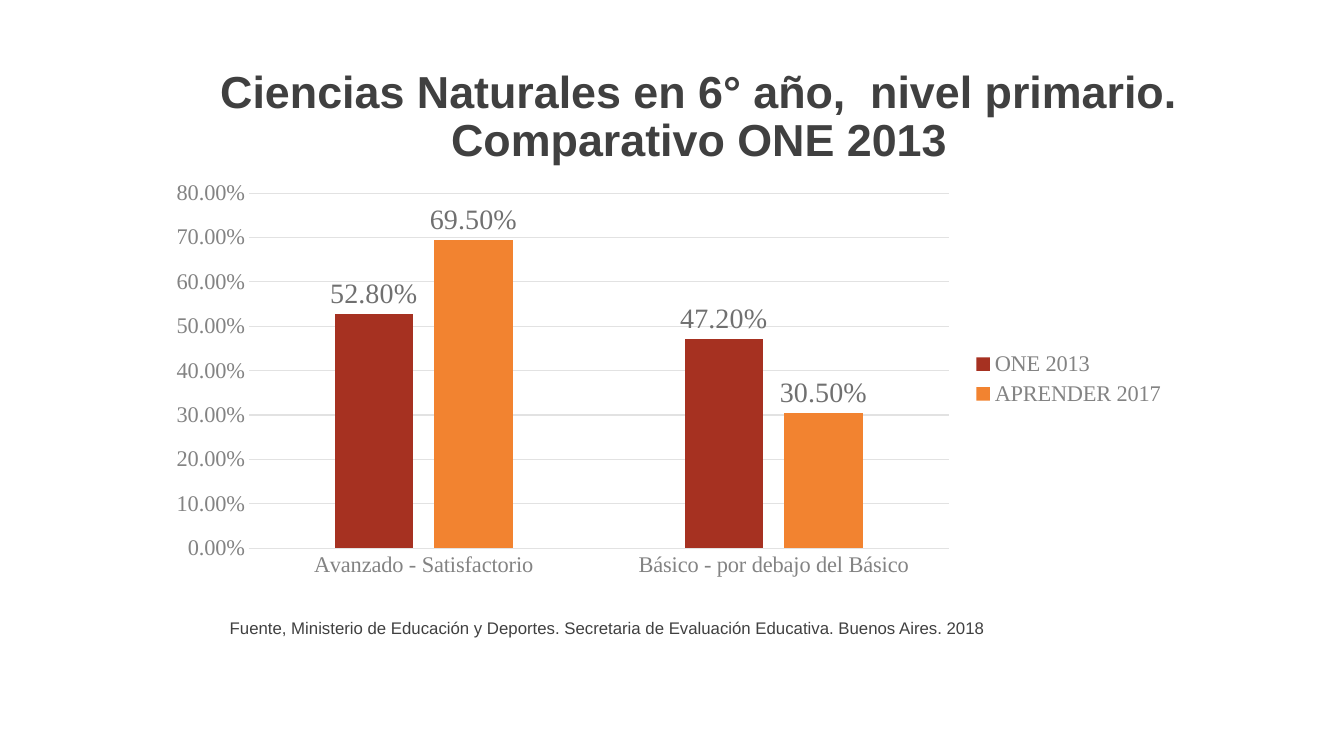
"""Build a slide comparing Natural Sciences results in ONE 2013 and APRENDER 2017."""
from lxml import etree
from pptx import Presentation
from pptx.chart.data import CategoryChartData
from pptx.dml.color import RGBColor
from pptx.enum.chart import XL_CHART_TYPE, XL_LABEL_POSITION, XL_LEGEND_POSITION, XL_TICK_MARK
from pptx.enum.text import MSO_ANCHOR, PP_ALIGN
from pptx.util import Inches, Pt

COLUMNS = XL_CHART_TYPE.COLUMN_CLUSTERED
OUTSIDE = XL_LABEL_POSITION.OUTSIDE_END
RIGHT = XL_LEGEND_POSITION.RIGHT
NO_TICK = XL_TICK_MARK.NONE
TOP, BOTTOM = MSO_ANCHOR.TOP, MSO_ANCHOR.BOTTOM
LEFT, CENTER = PP_ALIGN.LEFT, PP_ALIGN.CENTER

WHITE = RGBColor(0xFF, 0xFF, 0xFF)
DARK = RGBColor(0x40, 0x40, 0x40)
AXIS_GRAY = RGBColor(0x83, 0x83, 0x83)
LABEL_GRAY = RGBColor(0x70, 0x70, 0x70)
GRID_GRAY = RGBColor(0xE2, 0xE2, 0xE2)
RED = RGBColor(0xA6, 0x31, 0x21)
ORANGE = RGBColor(0xF2, 0x83, 0x30)

SANS, SERIF = "Arial", "Times New Roman"
PERCENT = "0.00%"

TEXTS = [
    dict(text="Ciencias Naturales en 6° año,  nivel primario.\nComparativo ONE 2013",
         box=(1.76, 0.52, 10.35, 1.18), anchor=BOTTOM,
         para=dict(alignment=CENTER, line_spacing=0.9),
         font=dict(name=SANS, size=Pt(32), bold=True)),
    dict(text="Fuente, Ministerio de Educación y Deportes. Secretaria de Evaluación "
              "Educativa. Buenos Aires. 2018",
         box=(2.18, 6.08, 8.99, 0.3), anchor=TOP,
         para=dict(alignment=LEFT),
         font=dict(name=SANS, size=Pt(12))),
]
CHART_BOX = (1.55, 1.71, 10.12, 4.1)
CATEGORIES = ["Avanzado - Satisfactorio", "Básico - por debajo del Básico"]
SERIES = [
    ("ONE 2013", (0.528, 0.472), RED),
    ("APRENDER 2017", (0.695, 0.305), ORANGE),
]
AXIS_FONT = dict(name=SERIF, size=Pt(16))
LABEL_FONT = dict(name=SERIF, size=Pt(20))


def set_attrs(obj, values):
    for name, value in values.items():
        setattr(obj, name, value)


def set_font(font, values, color):
    set_attrs(font, values)
    font.color.rgb = color


def set_line(line):
    line.color.rgb = GRID_GRAY
    line.width = Pt(0.75)


def add_text(s, text, box, anchor, para, font):
    tf = s.shapes.add_textbox(*map(Inches, box)).text_frame
    set_attrs(tf, dict(word_wrap=True, vertical_anchor=anchor))
    p = tf.paragraphs[0]
    p.text = text
    set_attrs(p, para)
    for r in p.runs:
        set_font(r.font, font, DARK)
    for br in p._p.findall("{*}br"):
        size = str(int(font["size"].pt * 100))
        etree.SubElement(br, p.runs[0].font._element.tag, sz=size)


def add_results_chart(s):
    data = CategoryChartData(number_format=PERCENT)
    data.categories = CATEGORIES
    for name, values, _ in SERIES:
        data.add_series(name, values)
    chart = s.shapes.add_chart(COLUMNS, *map(Inches, CHART_BOX), data).chart
    set_attrs(chart, dict(has_title=False, has_legend=True))
    set_font(chart.font, dict(name=SANS, size=Pt(10)), DARK)
    set_attrs(chart.legend, dict(position=RIGHT, include_in_layout=False))
    set_font(chart.legend.font, AXIS_FONT, AXIS_GRAY)

    for axis in (chart.category_axis, chart.value_axis):
        set_attrs(axis, dict(major_tick_mark=NO_TICK, minor_tick_mark=NO_TICK))
        set_font(axis.tick_labels.font, AXIS_FONT, AXIS_GRAY)
    set_line(chart.category_axis.format.line)
    axis = chart.value_axis
    set_attrs(axis, dict(minimum_scale=0, maximum_scale=0.8, major_unit=0.1))
    axis.format.line.fill.background()
    set_line(axis.major_gridlines.format.line)
    set_attrs(axis.tick_labels, dict(number_format=PERCENT, number_format_is_linked=False))

    plot = chart.plots[0]
    set_attrs(plot, dict(gap_width=219, overlap=-27, vary_by_categories=False))
    for series, (_, _, color) in zip(plot.series, SERIES):
        series.format.fill.solid()
        series.format.fill.fore_color.rgb = color
        labels = series.data_labels
        set_attrs(labels, dict(show_value=True, position=OUTSIDE, number_format=PERCENT,
                               number_format_is_linked=False))
        set_font(labels.font, LABEL_FONT, LABEL_GRAY)


def main():
    prs = Presentation()
    set_attrs(prs, dict(slide_width=Inches(13.33), slide_height=Inches(7.5)))
    s = prs.slides.add_slide(prs.slide_layouts[6])
    s.background.fill.solid()
    s.background.fill.fore_color.rgb = WHITE
    add_results_chart(s)
    for item in TEXTS:
        add_text(s, **item)
    prs.save("out.pptx")


if __name__ == "__main__":
    main()
